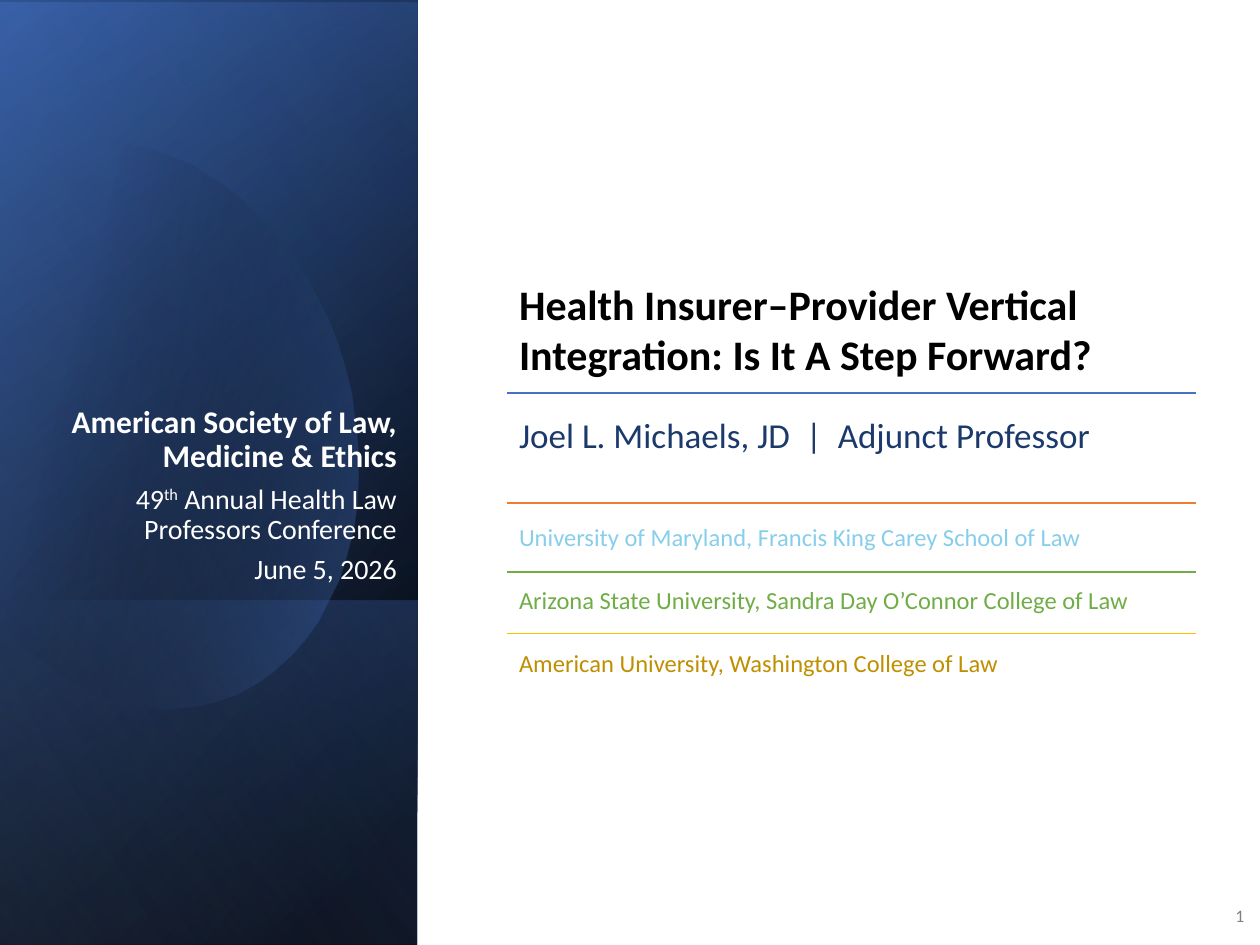
from lxml.etree import SubElement
from pptx import Presentation
from pptx.dml.color import RGBColor as RGB
from pptx.enum.shapes import MSO_CONNECTOR as CONN, MSO_SHAPE as SHAPE
from pptx.enum.text import MSO_ANCHOR as ANCHOR, MSO_AUTO_SIZE as FIT, PP_ALIGN as ALIGN
from pptx.oxml.ns import qn
from pptx.util import Pt

FONT = "Calibri"
HEX = {
    "black": "000000", "white": "FFFFFF", "gray": "808080",
    "blue": "4472C4", "deep": "2F5597", "pale": "8FAADC", "navy": "1B3A6B",
    "sky": "87CEEB", "orange": "ED7D31", "green": "70AD47",
    "gold": "FFC000", "ochre": "BF8F00",
}
SIDE, HIGH = 238.5, 540          # width and height of the blue panel
LEFT, WIDE = 289.5, 394          # column on the right

# Panel layers: top, height, gradient angle, stops of (place, colour, opacity)
BASE = [
    (0, HIGH, 50, [(8, "black", 100), (100, "deep", 100)]),
    (1.5, HIGH, 30, [(0, "black", 0), (99, "blue", 46)]),
    (343, 197, 130, [(2, "blue", 29), (100, "black", 30)]),
]
SHEEN = (0, HIGH, 120, [(0, "black", 0), (99, "pale", 11)])

# Oval: start point, then Bezier curves (three points) and lines (one point)
START = (69, 82)
OVAL = [
    [(123, 88), (176, 138), (197, 209)],
    [(221, 297), (189, 382), (123, 401)],
    [(82, 413), (38, 396), (5, 360)],
    [(-2, 351)], [(-18, 120)], [(-11, 111)],
    [(1, 99), (16, 90), (32, 85)],
    [(45, 81), (57, 81), (69, 82)],
]

# Title paragraphs: text, size, bold, space before
EVENT = [
    ("American Society of Law, Medicine & Ethics", 18, True, 0),
    ("49th Annual Health Law", 16, False, 6),
    ("Professors Conference", 16, False, 0),
    ("June 5, 2026", 16, False, 6),
]

# Right column: top, height, size, colour, text
LINES = [
    (110, 110, 24, "black", "Health Insurer–Provider Vertical Integration: Is It A Step Forward?"),
    (232.5, 47.5, 20, "navy", "Joel L. Michaels, JD  |  Adjunct Professor"),
    (295, 27.5, 14, "sky", "University of Maryland, Francis King Carey School of Law"),
    (330.5, 27.5, 14, "green", "Arizona State University, Sandra Day O’Connor College of Law"),
    (366.5, 27.5, 14, "ochre", "American University, Washington College of Law"),
]
RULES = [(224.5, "blue"), (287.5, "orange"), (327, "green"), (362, "gold")]


def shade(shape, angle, stops):
    """Fill a shape with a linear gradient and take its outline away."""
    shape.shadow.inherit = False
    shape.line.fill.background()
    shape.fill.background()
    props = shape._element.spPr
    grad = props.makeelement(qn("a:gradFill"), {"rotWithShape": "1"})
    props.replace(props.find(qn("a:noFill")), grad)
    row = SubElement(grad, qn("a:gsLst"))
    for place, tint, alpha in stops:
        stop = SubElement(row, qn("a:gs"), pos=str(place * 1000))
        color = SubElement(stop, qn("a:srgbClr"), val=HEX[tint])
        if alpha < 100:
            SubElement(color, qn("a:alpha"), val=str(alpha * 1000))
    SubElement(grad, qn("a:lin"), ang=str(angle * 60000), scaled="0")


def add_layer(slide, top, high, angle, stops):
    """Add a panel layer, turned a quarter and mirrored."""
    shift = (SIDE - high) / 2
    rect = slide.shapes.add_shape(SHAPE.RECTANGLE, Pt(shift), Pt(top - shift), Pt(high), Pt(SIDE))
    rect.rotation = 90
    rect._element.spPr.xfrm.set("flipH", "1")
    shade(rect, angle, stops)


def trace(start, parts, steps=16):
    """Turn curves and lines into a list of points."""
    points, last = [], start
    for part in parts:
        if len(part) == 1:
            points += part
        else:
            for n in range(1, steps + 1):
                t = n / steps
                mix = ((1 - t) ** 3, 3 * t * (1 - t) ** 2, 3 * t * t * (1 - t), t ** 3)
                points.append(tuple(sum(m * p[k] for m, p in zip(mix, [last] + part))
                                    for k in (0, 1)))
        last = part[-1]
    return points


def add_oval(slide):
    pen = slide.shapes.build_freeform(*START, scale=Pt(1))
    pen.add_line_segments(trace(START, OVAL), close=True)
    shade(pen.convert_to_shape(), 14, [(29, "black", 0), (100, "blue", 43)])


def style(font, size, tint, bold=False):
    font.name, font.size, font.bold = FONT, Pt(size), bold
    font.color.rgb = RGB.from_string(HEX[tint])


def set_title(slide):
    title = slide.shapes.title
    title.left, title.top, title.width, title.height = Pt(21.5), Pt(110), Pt(212.5), Pt(228.5)
    title._element.getparent().append(title._element)   # in front of the panel
    frame = title.text_frame
    frame.word_wrap, frame.auto_size = True, FIT.NONE
    frame.vertical_anchor = ANCHOR.BOTTOM
    frame.text = "\n".join(item[0] for item in EVENT)
    for para, (text, size, bold, gap) in zip(frame.paragraphs, EVENT):
        para.alignment, para.line_spacing, para.space_before = ALIGN.RIGHT, 0.9, Pt(gap)
        if text.startswith("49th"):
            para.text = "49"
            para.add_run().text = "th"
            para.add_run().text = text[4:]
            para.runs[1].font._element.set("baseline", "30000")
        for run in para.runs:
            style(run.font, size, "white", bold)


def add_text(slide, box, text, size, tint, bold=False, anchor=ANCHOR.TOP, align=ALIGN.LEFT):
    frame = slide.shapes.add_textbox(*map(Pt, box)).text_frame
    frame.word_wrap, frame.vertical_anchor = True, anchor
    frame.text = text
    para = frame.paragraphs[0]
    para.alignment = align
    style(para.runs[0].font, size, tint, bold)


def add_rule(slide, y, tint):
    rule = slide.shapes.add_connector(CONN.STRAIGHT, Pt(LEFT), Pt(y), Pt(LEFT + WIDE), Pt(y))
    rule.line.color.rgb = RGB.from_string(HEX[tint])
    rule.line.width = Pt(1)
    SubElement(rule._element.spPr, qn("a:effectLst"))


def main():
    deck = Presentation()
    deck.slide_width, deck.slide_height = Pt(720), Pt(540)
    slide = deck.slides.add_slide(deck.slide_layouts[5])

    # Blue panel with the event
    for layer in BASE:
        add_layer(slide, *layer)
    add_oval(slide)
    add_layer(slide, *SHEEN)
    set_title(slide)

    # Talk, speaker and schools
    for top, high, size, tint, text in LINES:
        head = size == 24
        add_text(slide, (LEFT, top, WIDE, high), text, size, tint, head,
                 ANCHOR.BOTTOM if head else ANCHOR.TOP)
    for y, tint in RULES:
        add_rule(slide, y, tint)

    # Page number
    add_text(slide, (691, 508.5, 27, 29), "1", 10, "gray",
             anchor=ANCHOR.MIDDLE, align=ALIGN.RIGHT)
    deck.save("out.pptx")


if __name__ == "__main__":
    main()
